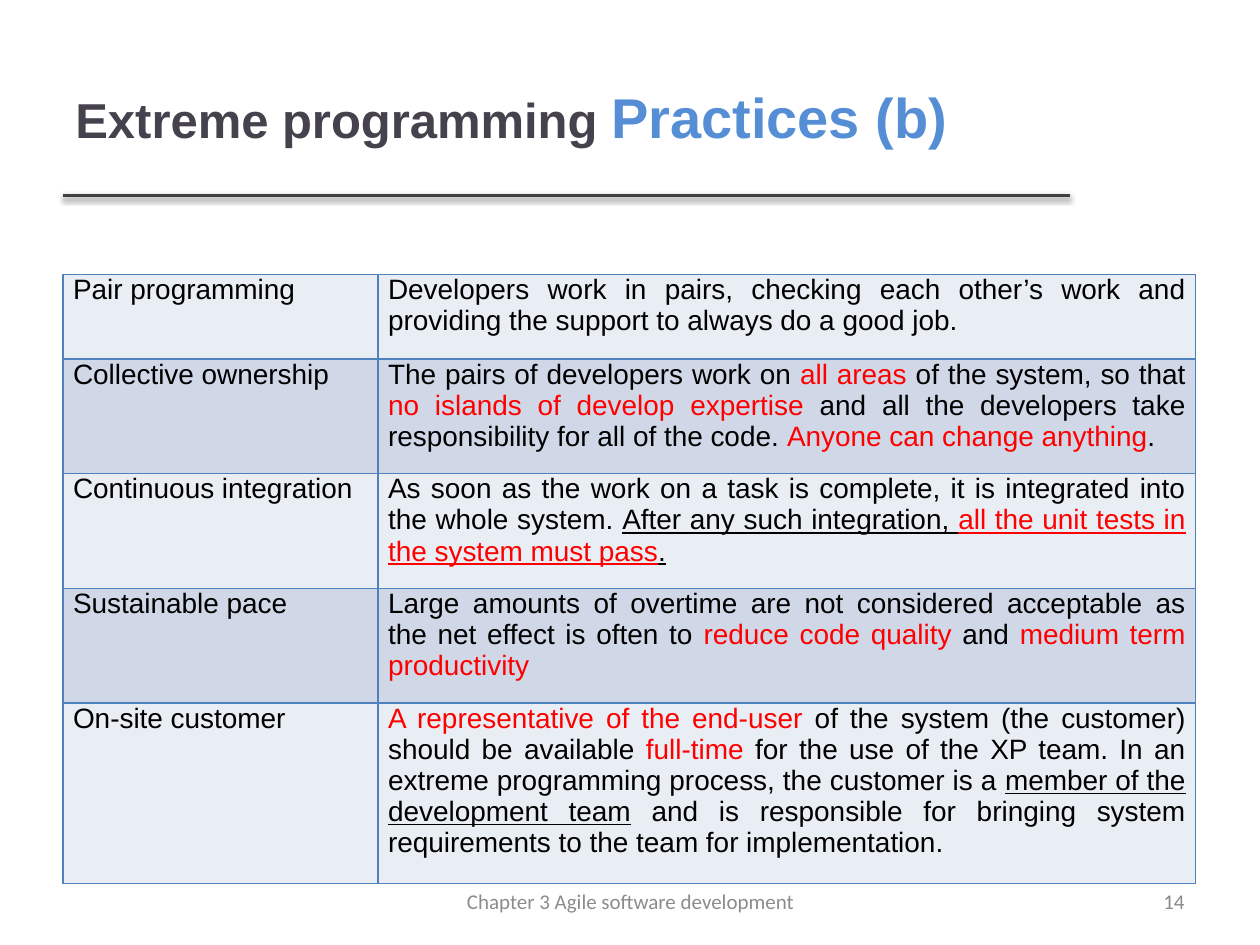
from lxml import etree
from pptx import Presentation
from pptx.dml.color import RGBColor
from pptx.enum.shapes import MSO_CONNECTOR
from pptx.enum.text import MSO_ANCHOR, PP_ALIGN
from pptx.oxml import parse_xml
from pptx.util import Inches, Pt

NS = "http://schemas.openxmlformats.org/drawingml/2006/main"
STRAIGHT = MSO_CONNECTOR.STRAIGHT
MIDDLE = MSO_ANCHOR.MIDDLE
LEFT, CENTER, RIGHT, JUSTIFY = PP_ALIGN.LEFT, PP_ALIGN.CENTER, PP_ALIGN.RIGHT, PP_ALIGN.JUSTIFY

BLACK = RGBColor(0x00, 0x00, 0x00)
RED = RGBColor(0xFF, 0x00, 0x00)
CHARCOAL = RGBColor(0x46, 0x42, 0x4D)
BLUE = RGBColor(0x55, 0x8E, 0xD5)
RULE = RGBColor(0x40, 0x40, 0x40)
BORDER = RGBColor(0x4F, 0x81, 0xBD)
LIGHT = RGBColor(0xE9, 0xED, 0xF4)
DARK = RGBColor(0xD0, 0xD8, 0xE8)
NUMBER_GREY = RGBColor(0x89, 0x89, 0x89)
FOOTER_GREY = RGBColor(0x8C, 0x8C, 0x8C)

BODY = {"name": "Arial", "size": Pt(16), "color": BLACK}
HOT = {**BODY, "color": RED}
UNDER = {**BODY, "underline": True}
HOT_UNDER = {**HOT, "underline": True}
TITLE = {"name": "Arial", "size": Pt(28), "bold": True, "color": CHARCOAL}
TITLE_ACCENT = {**TITLE, "size": Pt(32), "color": BLUE}
NUMBER = {"name": "Calibri", "size": Pt(12), "color": NUMBER_GREY}
FOOTER = {**NUMBER, "color": FOOTER_GREY}


def write(tf, runs, align):
    p = tf.paragraphs[0]
    p.alignment = align
    for text, fmt in runs:
        r = p.add_run()
        r.text = text
        for key, value in fmt.items():
            if key == "color":
                r.font.color.rgb = value
            else:
                setattr(r.font, key, value)


prs = Presentation()
prs.slide_width, prs.slide_height = Inches(10), Inches(7.5)
s = prs.slides.add_slide(prs.slide_layouts[6])

rule = s.shapes.add_connector(STRAIGHT, Inches(0.5), Inches(1.55), Inches(8.49), Inches(1.55))
rule.line.color.rgb = RULE
rule.line.width = Pt(2)
rule._element.spPr.append(parse_xml(
    f'<a:effectLst xmlns:a="{NS}">'
    f'<a:outerShdw blurRad="{Pt(3.1)}" dist="{Pt(1.6)}" dir="5400000" rotWithShape="0">'
    '<a:srgbClr val="000000"><a:alpha val="38000"/></a:srgbClr>'
    '</a:outerShdw></a:effectLst>'))

boxes = [
    ((0.5, 0.3, 7.98, 1.25), LEFT,
     [("Extreme programming ", TITLE), ("Practices (b)", TITLE_ACCENT)]),
    ((7.17, 6.95, 2.33, 0.4), RIGHT, [("14", NUMBER)]),
    ((3.42, 6.95, 3.17, 0.4), CENTER, [("Chapter 3 Agile software development", FOOTER)]),
]
for box, align, runs in boxes:
    tf = s.shapes.add_textbox(*map(Inches, box)).text_frame
    tf.word_wrap = True
    tf.vertical_anchor = MIDDLE
    write(tf, runs, align)

practices = [
    ("Pair programming", 0.67, [
        ("Developers work in pairs, checking each other’s work and providing the support "
         "to always do a good job.", BODY)]),
    ("Collective ownership", 0.91, [
        ("The pairs of developers work on ", BODY),
        ("all areas ", HOT),
        ("of the system, so that ", BODY),
        ("no islands of develop expertise", HOT),
        (" and all the developers take responsibility for all of the code. ", BODY),
        ("Anyone can change anything", HOT),
        (".", BODY)]),
    ("Continuous integration", 0.91, [
        ("As soon as the work on a task is complete, it is integrated into the whole system. ", BODY),
        ("After any such integration, ", UNDER),
        ("all the unit tests in the system must pass", HOT_UNDER),
        (".", UNDER)]),
    ("Sustainable pace", 0.91, [
        ("Large amounts of overtime are not considered acceptable as the net effect is often to ", BODY),
        ("reduce code quality ", HOT),
        ("and ", BODY),
        ("medium term productivity", HOT)]),
    ("On-site customer", 1.4, [
        ("A representative of the end-user ", HOT),
        ("of the system (the customer) should be available ", BODY),
        ("full-time ", HOT),
        ("for the use of the XP team. In an extreme programming process, the customer is a ", BODY),
        ("member of the development team", UNDER),
        (" and is responsible for bringing system requirements to the team for implementation.", BODY)]),
]
margins = {"margin_left": Inches(0.08), "margin_top": Inches(0),
           "margin_right": Inches(0.08), "margin_bottom": Inches(0.1)}

table = s.shapes.add_table(len(practices), 2, Inches(0.5), Inches(2.18),
                           Inches(8.99), Inches(4.8)).table
table.first_row = False
table.horz_banding = False
for col, width in zip(table.columns, (2.5, 6.49)):
    col.width = Inches(width)

for i, (name, height, description) in enumerate(practices):
    table.rows[i].height = Inches(height)
    for j, runs in enumerate(([(name, BODY)], description)):
        cell = table.cell(i, j)
        for key, value in margins.items():
            setattr(cell, key, value)
        tcPr = cell._tc.get_or_add_tcPr()
        for side in ("lnL", "lnR", "lnT", "lnB"):
            ln = etree.SubElement(tcPr, f"{{{NS}}}{side}", w=str(Pt(1)))
            fill = etree.SubElement(ln, f"{{{NS}}}solidFill")
            etree.SubElement(fill, f"{{{NS}}}srgbClr", val=str(BORDER))
        cell.fill.solid()
        cell.fill.fore_color.rgb = DARK if i % 2 else LIGHT
        write(cell.text_frame, runs, JUSTIFY)

prs.save("out.pptx")
